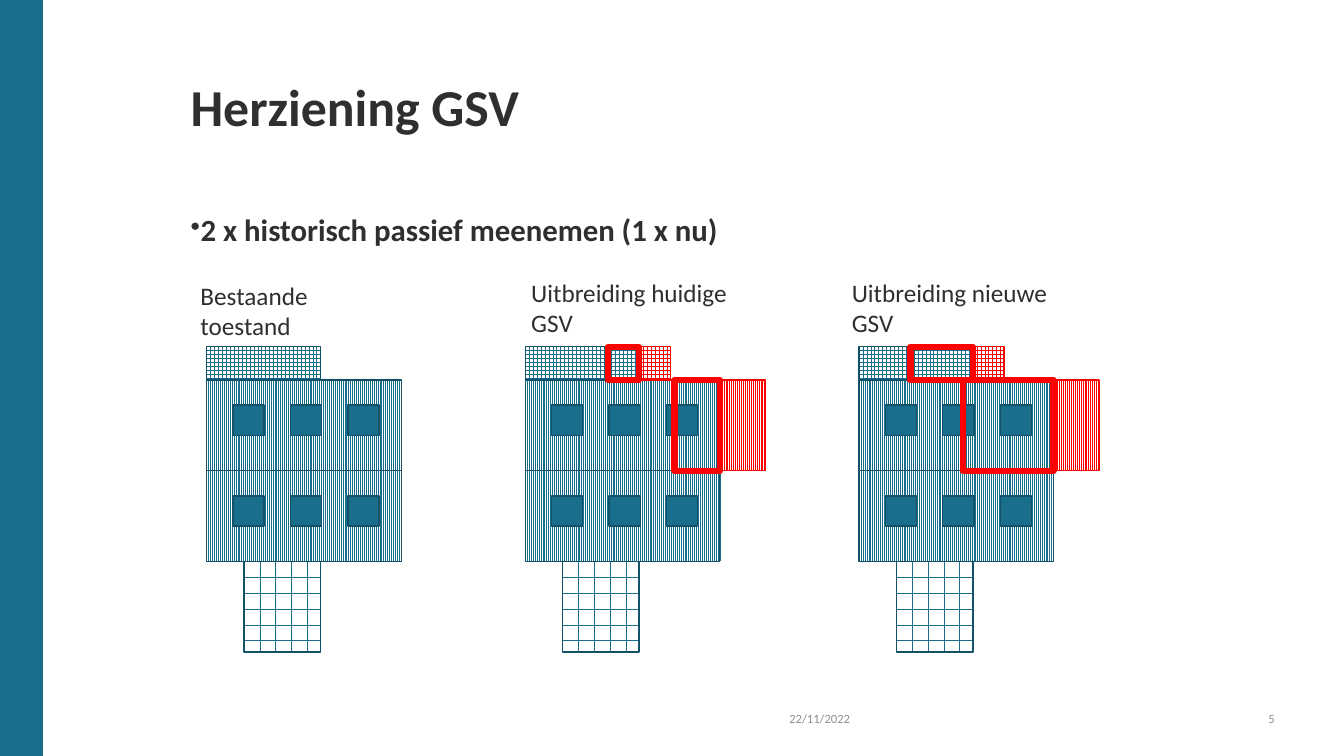
from lxml import etree
from pptx import Presentation
from pptx import util as u
from pptx.dml.color import RGBColor
from pptx.enum import dml, shapes, text
from pptx.oxml.ns import qn

COLORS = {"teal": "196E8B", "edge": "125167", "red": "FF0000",
          "white": "FFFFFF", "ink": "2F2F2F", "muted": "8F8F8F"}
PATTERN = dml.MSO_PATTERN_TYPE
FLOOR_HEIGHT = 0.9
HOUSE_WIDTH = 1.93
ROOF_WIDTH = 1.13
ROOF_HEIGHT = 0.33
WINDOW_STEP = 0.57


def color(name):
    return RGBColor.from_string(COLORS[name])


def add_rect(parent, box, edge, fill=None, pattern=None, weight=1):
    rect = parent.add_shape(shapes.MSO_SHAPE.RECTANGLE, *map(u.Inches, box))
    rect.shadow.inherit = False
    rect.line.color.rgb = color(edge)
    rect.line.width = u.Pt(weight)
    if pattern is not None:
        rect.fill.patterned()
        rect.fill.pattern = pattern
        rect.fill.fore_color.rgb = color(fill)
        rect.fill.back_color.rgb = color("white")
    elif fill:
        rect.fill.solid()
        rect.fill.fore_color.rgb = color(fill)
    else:
        rect.fill.background()


def add_text(parent, box, words, size, ink="ink", bold=False, inset=True,
             anchor=text.MSO_ANCHOR.TOP, align=text.PP_ALIGN.LEFT,
             spacing=None, bullet=False):
    frame = parent.add_textbox(*map(u.Inches, box)).text_frame
    frame.word_wrap = True
    frame.vertical_anchor = anchor
    if not inset:
        frame.margin_left = frame.margin_right = 0
        frame.margin_top = frame.margin_bottom = 0
    para = frame.paragraphs[0]
    para.text = words
    para.alignment = align
    if spacing:
        para.line_spacing = spacing
    if bullet:
        props = para._p.get_or_add_pPr()
        props.set("marL", str(u.Inches(0.1)))
        props.set("indent", str(-u.Inches(0.1)))
        etree.SubElement(props, qn("a:buSzPct")).set("val", "90000")
        etree.SubElement(props, qn("a:buChar")).set("char", "•")
    para.font.name = "Calibri"
    para.font.size = u.Pt(size)
    para.font.bold = bold
    para.font.color.rgb = color(ink)


def add_frame(page):
    add_rect(page.shapes, (0, 0, 0.42, 7.5), "teal", "teal")
    add_text(page.shapes, (1.89, 0.83, 10.81, 1.22), "Herziening GSV", 37,
             bold=True, inset=False, spacing=u.Pt(38))
    add_text(page.shapes, (1.89, 2.13, 10.81, 4.02),
             "2 x historisch passief meenemen (1 x nu)", 22,
             bold=True, inset=False, spacing=0.9, bullet=True)


def add_footer(page):
    for box, words, align in [
        ((7.73, 6.93, 1.31, 0.39), "22/11/2022", text.PP_ALIGN.LEFT),
        ((11.95, 6.93, 0.79, 0.39), "5", text.PP_ALIGN.RIGHT),
    ]:
        add_text(page.shapes, box, words, 9, "muted", align=align,
                 anchor=text.MSO_ANCHOR.MIDDLE)


def add_house(parts, left, top):
    floors = [top + ROOF_HEIGHT + FLOOR_HEIGHT * level for level in range(3)]
    for floor in floors[:2]:
        add_rect(parts, (left, floor, HOUSE_WIDTH, FLOOR_HEIGHT),
                 "edge", "teal", PATTERN.LIGHT_VERTICAL)
    add_rect(parts, (left + 0.37, floors[2], 0.76, FLOOR_HEIGHT),
             "edge", "teal", PATTERN.DOTTED_GRID)
    add_rect(parts, (left, top, ROOF_WIDTH, ROOF_HEIGHT),
             "edge", "teal", PATTERN.LARGE_GRID)
    for floor in floors[:2]:
        for column in range(3):
            add_rect(parts, (left + 0.26 + WINDOW_STEP * column,
                             floor + 0.25, 0.31, 0.3), "edge", "teal")


def add_extension(parts, left, top, factor):
    for base, y, width, height, pattern in [
        (ROOF_WIDTH, top, 0.31, ROOF_HEIGHT, PATTERN.LARGE_GRID),
        (HOUSE_WIDTH, top + ROOF_HEIGHT, 0.45, FLOOR_HEIGHT,
         PATTERN.LIGHT_VERTICAL),
    ]:
        right = left + base
        add_rect(parts, (right, y, width, height), "red", "red", pattern)
        passive = width * factor
        add_rect(parts, (right - passive, y, passive, height), "red", weight=4.5)


def add_scenario(page, left, top, label, label_box, factor):
    parts = page.shapes.add_group_shape().shapes
    add_house(parts, left, top)
    if factor:
        add_extension(parts, left, top, factor)
    add_text(parts, label_box, label, 18)


def main():
    deck = Presentation()
    deck.slide_width = u.Inches(13.33)
    deck.slide_height = u.Inches(7.5)
    page = deck.slides.add_slide(deck.slide_layouts[6])
    add_frame(page)
    add_footer(page)
    for left, label, label_box, factor in [
        (2.05, "Bestaande toestand", (1.89, 2.73, 1.96, 0.35), 0),
        (5.21, "Uitbreiding huidige GSV", (5.17, 2.7, 2.32, 0.35), 1),
        (8.52, "Uitbreiding nieuwe GSV", (8.35, 2.7, 2.31, 0.35), 2),
    ]:
        add_scenario(page, left, 3.44, label, label_box, factor)
    deck.save("out.pptx")


if __name__ == "__main__":
    main()
